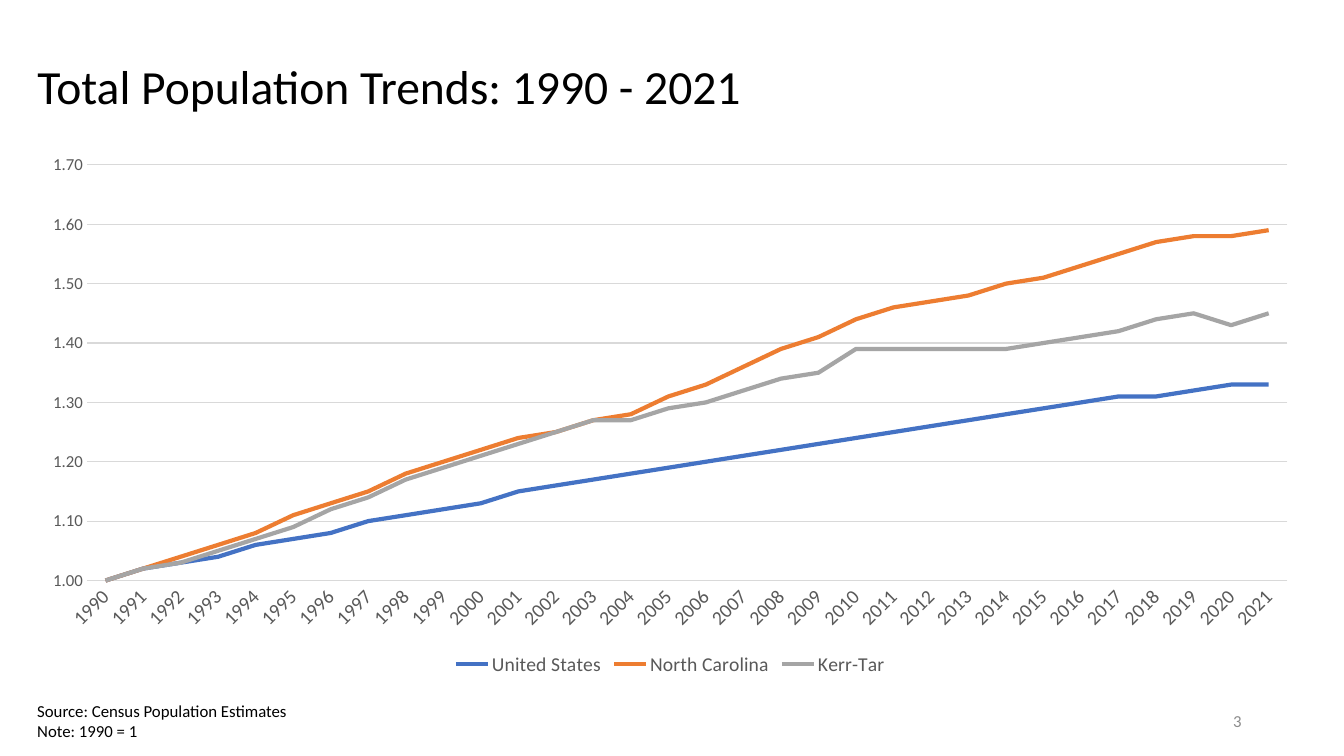
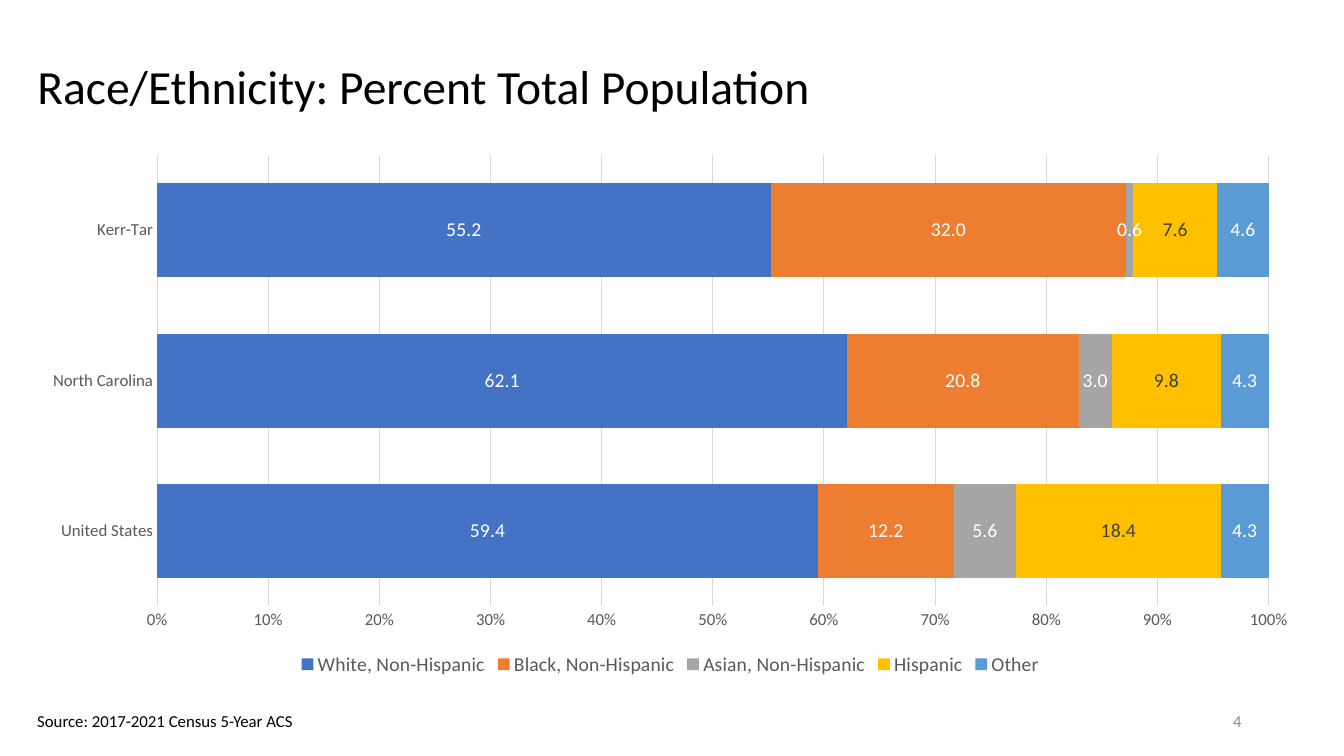
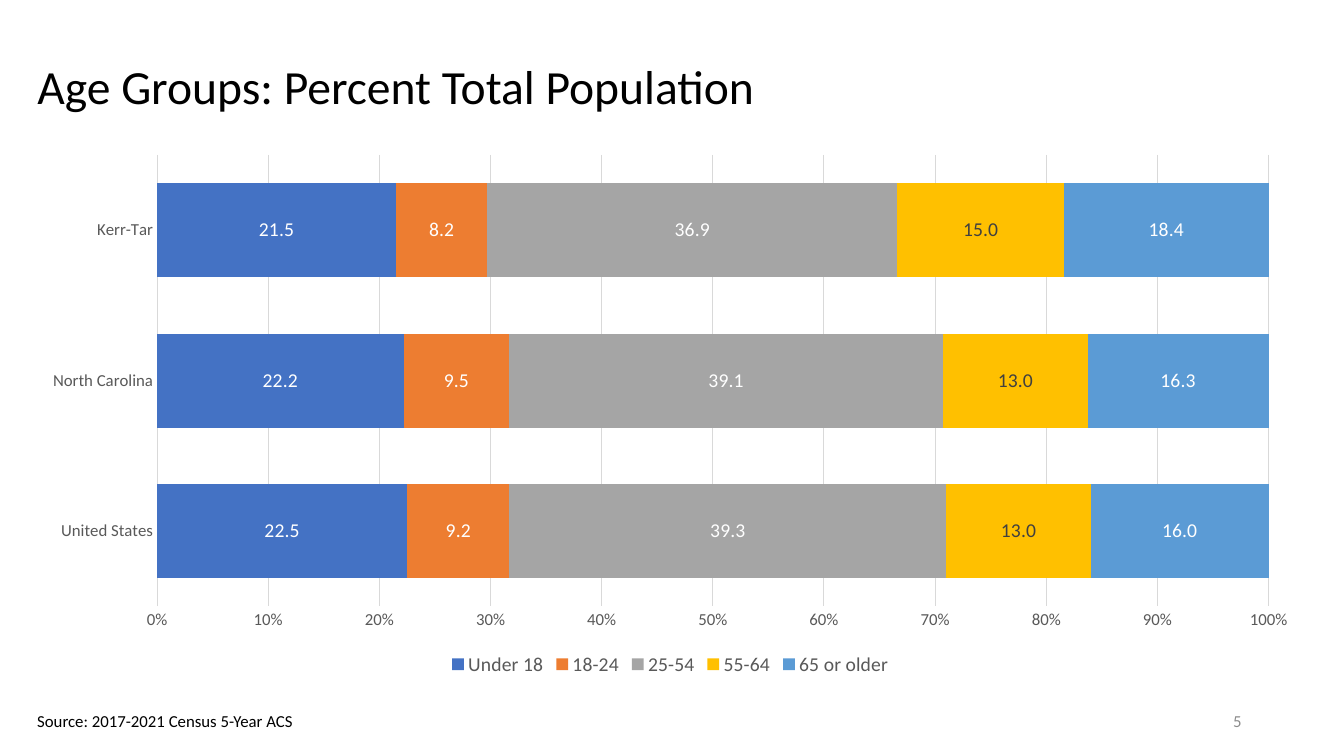
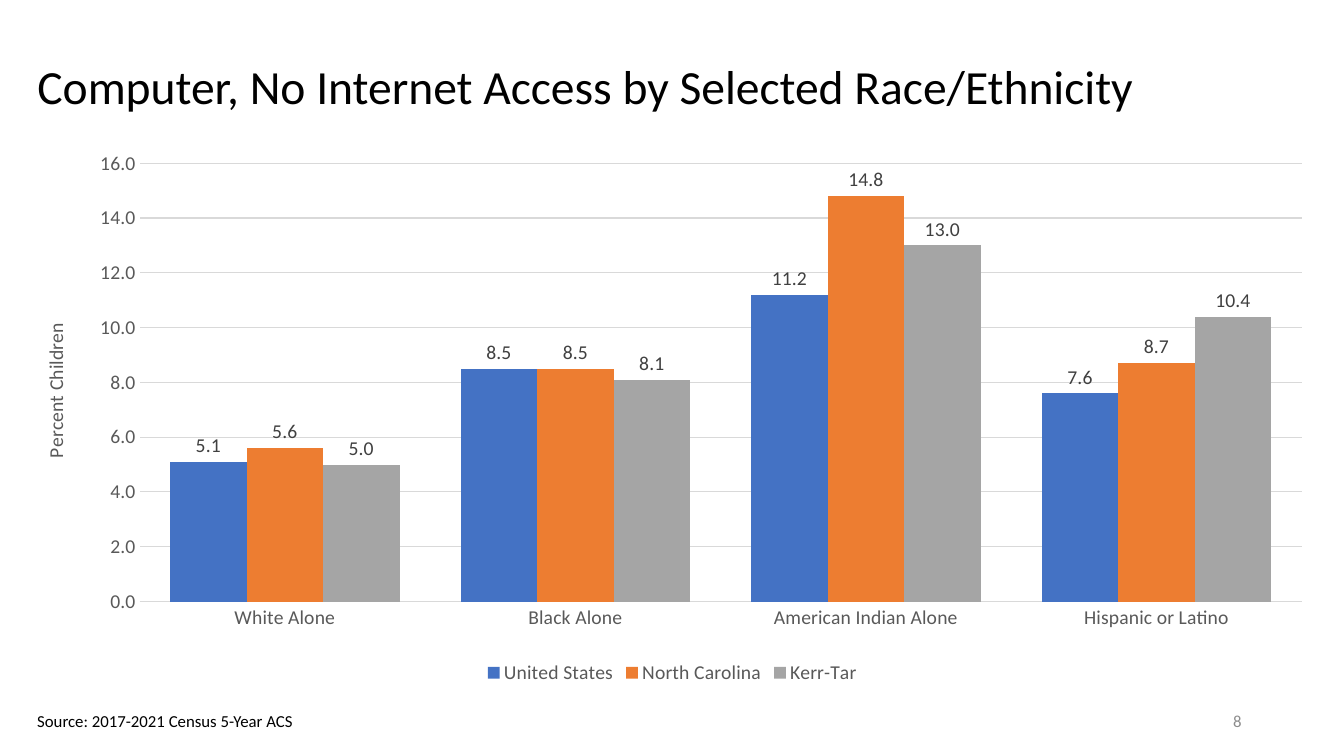
"""Build four slides of regional population and internet access charts."""
from dataclasses import dataclass
from typing import Optional

from lxml.etree import SubElement
from pptx import Presentation
from pptx.chart.chart import Chart
from pptx.chart.data import CategoryChartData
from pptx.dml.color import RGBColor
from pptx.enum.chart import XL_CHART_TYPE as ChartType
from pptx.enum.chart import XL_LABEL_POSITION as LabelPosition
from pptx.enum.chart import XL_LEGEND_POSITION as LegendPosition
from pptx.enum.chart import XL_TICK_MARK as TickMark
from pptx.enum.text import MSO_ANCHOR as Anchor
from pptx.enum.text import MSO_AUTO_SIZE as AutoSize
from pptx.enum.text import PP_ALIGN as Align
from pptx.oxml.ns import qn
from pptx.slide import Slide
from pptx.text.text import Font, TextFrame
from pptx.util import Pt

FONT = "Calibri"
BLACK = RGBColor(0x00, 0x00, 0x00)
WHITE = RGBColor(0xFF, 0xFF, 0xFF)
DARK_GRAY = RGBColor(0x40, 0x40, 0x40)
AXIS_GRAY = RGBColor(0x59, 0x59, 0x59)
NUMBER_GRAY = RGBColor(0x8C, 0x8C, 0x8C)
GRID_GRAY = RGBColor(0xD9, 0xD9, 0xD9)
BLUE = RGBColor(0x44, 0x72, 0xC4)
ORANGE = RGBColor(0xED, 0x7D, 0x31)
GRAY = RGBColor(0xA5, 0xA5, 0xA5)
GOLD = RGBColor(0xFF, 0xC0, 0x00)
LIGHT_BLUE = RGBColor(0x5B, 0x9B, 0xD5)
PALETTE = [BLUE, ORANGE, GRAY, GOLD, LIGHT_BLUE]

LEFT = 19.5
CONTENT_WIDTH = 918.5
CHART_TOP = 103
REGIONS = ["United States", "North Carolina", "Kerr-Tar"]
YEARS = [str(year) for year in range(1990, 2022)]
ACS_SOURCE = "Source: 2017-2021 Census 5-Year ACS"


@dataclass(frozen=True)
class ChartStyle:
    """Look of one kind of chart."""

    kind: ChartType
    category_size: float
    value_size: float
    value_format: str
    width: float = CONTENT_WIDTH
    height: float = 383
    minimum: Optional[float] = None
    gap: Optional[int] = None
    overlap: int = 0
    label_position: Optional[LabelPosition] = None
    label_colors: tuple[RGBColor, ...] = ()
    label_rotation: Optional[int] = None
    plot_area: Optional[tuple[float, float, float, float]] = None
    value_title: str = ""


@dataclass(frozen=True)
class ChartSlide:
    """Content of one slide."""

    number: int
    title: str
    source: str
    style: ChartStyle
    categories: list[str]
    series: dict[str, list[float]]


TREND = ChartStyle(ChartType.LINE, 14, 12, "0.00", minimum=1, label_rotation=-45)
SHARES = ChartStyle(
    ChartType.BAR_STACKED_100, 12, 12, "0%", gap=60, overlap=100,
    label_position=LabelPosition.CENTER,
    label_colors=(WHITE, WHITE, WHITE, DARK_GRAY, WHITE),
)
COLUMNS = ChartStyle(
    ChartType.COLUMN_CLUSTERED, 14, 14, "#,##0.0", width=921.5, height=389, gap=80,
    label_position=LabelPosition.OUTSIDE_END, label_colors=(DARK_GRAY,) * 3,
    plot_area=(0.087, 0.035, 0.901, 0.805), value_title="Percent Children",
)

SLIDES = [
    ChartSlide(
        3, "Total Population Trends: 1990 - 2021",
        "Source: Census Population Estimates\nNote: 1990 = 1", TREND, YEARS,
        {
            "United States": [
                1, 1.02, 1.03, 1.04, 1.06, 1.07, 1.08, 1.1, 1.11, 1.12, 1.13,
                1.15, 1.16, 1.17, 1.18, 1.19, 1.2, 1.21, 1.22, 1.23, 1.24, 1.25,
                1.26, 1.27, 1.28, 1.29, 1.3, 1.31, 1.31, 1.32, 1.33, 1.33],
            "North Carolina": [
                1, 1.02, 1.04, 1.06, 1.08, 1.11, 1.13, 1.15, 1.18, 1.2, 1.22,
                1.24, 1.25, 1.27, 1.28, 1.31, 1.33, 1.36, 1.39, 1.41, 1.44, 1.46,
                1.47, 1.48, 1.5, 1.51, 1.53, 1.55, 1.57, 1.58, 1.58, 1.59],
            "Kerr-Tar": [
                1, 1.02, 1.03, 1.05, 1.07, 1.09, 1.12, 1.14, 1.17, 1.19, 1.21,
                1.23, 1.25, 1.27, 1.27, 1.29, 1.3, 1.32, 1.34, 1.35, 1.39, 1.39,
                1.39, 1.39, 1.39, 1.4, 1.41, 1.42, 1.44, 1.45, 1.43, 1.45],
        },
    ),
    ChartSlide(
        4, "Race/Ethnicity: Percent Total Population", ACS_SOURCE, SHARES, REGIONS,
        {
            "White, Non-Hispanic": [59.4, 62.1, 55.2],
            "Black, Non-Hispanic": [12.2, 20.8, 32],
            "Asian, Non-Hispanic": [5.6, 3, 0.6],
            "Hispanic": [18.4, 9.8, 7.6],
            "Other": [4.3, 4.3, 4.6],
        },
    ),
    ChartSlide(
        5, "Age Groups: Percent Total Population", ACS_SOURCE, SHARES, REGIONS,
        {
            "Under 18": [22.5, 22.2, 21.5],
            "18-24": [9.2, 9.5, 8.2],
            "25-54": [39.3, 39.1, 36.9],
            "55-64": [13, 13, 15],
            "65 or older": [16, 16.3, 18.4],
        },
    ),
    ChartSlide(
        8, "Computer, No Internet Access by Selected Race/Ethnicity", ACS_SOURCE, COLUMNS,
        ["White Alone", "Black Alone", "American Indian Alone", "Hispanic or Latino"],
        {
            "United States": [5.1, 8.5, 11.2, 7.6],
            "North Carolina": [5.6, 8.5, 14.8, 8.7],
            "Kerr-Tar": [5, 8.1, 13, 10.4],
        },
    ),
]


def format_font(font: Font, size: float, color: RGBColor) -> None:
    """Set the typeface, size and colour of a font."""
    font.name = FONT
    font.size = Pt(size)
    font.bold = False
    font.color.rgb = color


def write_text(
    frame: TextFrame, text: str, *, size: float = 12, color: RGBColor = BLACK,
    align: Optional[Align] = None, spacing: Optional[float] = None,
) -> None:
    """Fill a text frame with one formatted paragraph per line."""
    frame.text = text
    for paragraph in frame.paragraphs:
        paragraph.alignment = align
        paragraph.line_spacing = spacing
        for run in paragraph.runs:
            format_font(run.font, size, color)


def add_title(slide: Slide, text: str) -> None:
    """Place and fill the title placeholder."""
    title = slide.shapes.title
    title.left, title.top = Pt(LEFT), Pt(24.5)
    title.width, title.height = Pt(CONTENT_WIDTH), Pt(78.5)
    title.text_frame.vertical_anchor = Anchor.MIDDLE
    write_text(title.text_frame, text, size=34, align=Align.LEFT, spacing=0.9)


def add_footer(slide: Slide, source: str, number: int) -> None:
    """Add the source note and the slide number."""
    height = 21.6 + 14.4 * source.count("\n")
    note = slide.shapes.add_textbox(Pt(LEFT), Pt(515 - height / 2), Pt(200), Pt(height))
    note.text_frame.word_wrap = False
    note.text_frame.auto_size = AutoSize.SHAPE_TO_FIT_TEXT
    write_text(note.text_frame, source, align=Align.LEFT)
    box = slide.shapes.add_textbox(Pt(678), Pt(500.5), Pt(216), Pt(28.75))
    box.text_frame.word_wrap = True
    box.text_frame.vertical_anchor = Anchor.MIDDLE
    write_text(box.text_frame, str(number), color=NUMBER_GRAY, align=Align.RIGHT)


def format_axes(chart: Chart, style: ChartStyle) -> None:
    """Format both axes and the gridlines."""
    category_axis, value_axis = chart.category_axis, chart.value_axis
    for axis, size in ((category_axis, style.category_size), (value_axis, style.value_size)):
        axis.major_tick_mark = axis.minor_tick_mark = TickMark.NONE
        format_font(axis.tick_labels.font, size, AXIS_GRAY)
    category_axis.has_major_gridlines = False
    value_axis.has_major_gridlines = True
    for line in (category_axis.format.line, value_axis.major_gridlines.format.line):
        line.color.rgb = GRID_GRAY
        line.width = Pt(0.75)
    value_axis.format.line.fill.background()
    value_axis.tick_labels.number_format = style.value_format
    value_axis.tick_labels.number_format_is_linked = False
    if style.minimum is not None:
        value_axis.minimum_scale = style.minimum
    if style.label_rotation is not None:
        body = next(category_axis.tick_labels.font._element.iterancestors(qn("c:txPr"))) \
            .find(qn("a:bodyPr"))
        body.set("rot", str(style.label_rotation * 60000))
    if style.value_title:
        write_text(value_axis.axis_title.text_frame, style.value_title, size=14, color=AXIS_GRAY)


def format_series(chart: Chart, style: ChartStyle) -> None:
    """Colour the series and label their values."""
    plot = chart.plots[0]
    plot.vary_by_categories = False
    if style.gap is not None:
        plot.gap_width, plot.overlap = style.gap, style.overlap
    for series, color in zip(plot.series, PALETTE):
        if style.kind == ChartType.LINE:
            series.smooth = False
            series.format.line.color.rgb = color
            series.format.line.width = Pt(3)
        else:
            series.format.fill.solid()
            series.format.fill.fore_color.rgb = color
    for series, color in zip(plot.series, style.label_colors):
        labels = series.data_labels
        labels.show_value = True
        labels.position = style.label_position
        labels.number_format = "#,##0.0"
        labels.number_format_is_linked = False
        format_font(labels.font, 14, color)


def place_plot(chart: Chart, area: tuple[float, float, float, float]) -> None:
    """Fix the inner plot area as fractions of the chart."""
    plot_area = chart._chartSpace.chart.plotArea
    layout = plot_area.find(qn("c:layout"))
    if layout is None:
        layout = SubElement(plot_area, qn("c:layout"))
        plot_area.insert(0, layout)
    manual = SubElement(layout, qn("c:manualLayout"))
    settings = [("layoutTarget", "inner"), ("xMode", "edge"), ("yMode", "edge")]
    settings += [(name, str(value)) for name, value in zip("xywh", area)]
    for name, value in settings:
        SubElement(manual, qn(f"c:{name}")).set("val", value)


def add_chart(slide: Slide, content: ChartSlide) -> None:
    """Add the chart of a slide with its legend."""
    style = content.style
    data = CategoryChartData(number_format="0.00" if style is TREND else "#,##0.0")
    data.categories = content.categories
    for name, values in content.series.items():
        data.add_series(name, values)
    chart = slide.shapes.add_chart(
        style.kind, Pt(LEFT), Pt(CHART_TOP), Pt(style.width), Pt(style.height), data
    ).chart
    format_font(chart.font, 10, BLACK)
    chart.has_title = False
    chart.has_legend = True
    chart.legend.position = LegendPosition.BOTTOM
    chart.legend.include_in_layout = False
    format_font(chart.legend.font, 14, AXIS_GRAY)
    format_axes(chart, style)
    format_series(chart, style)
    if style.plot_area:
        place_plot(chart, style.plot_area)


def main() -> None:
    """Build and save the presentation."""
    presentation = Presentation()
    presentation.slide_width, presentation.slide_height = Pt(960), Pt(540)
    for content in SLIDES:
        slide = presentation.slides.add_slide(presentation.slide_layouts[5])
        add_title(slide, content.title)
        add_chart(slide, content)
        add_footer(slide, content.source, content.number)
    presentation.save("out.pptx")


if __name__ == "__main__":
    main()
